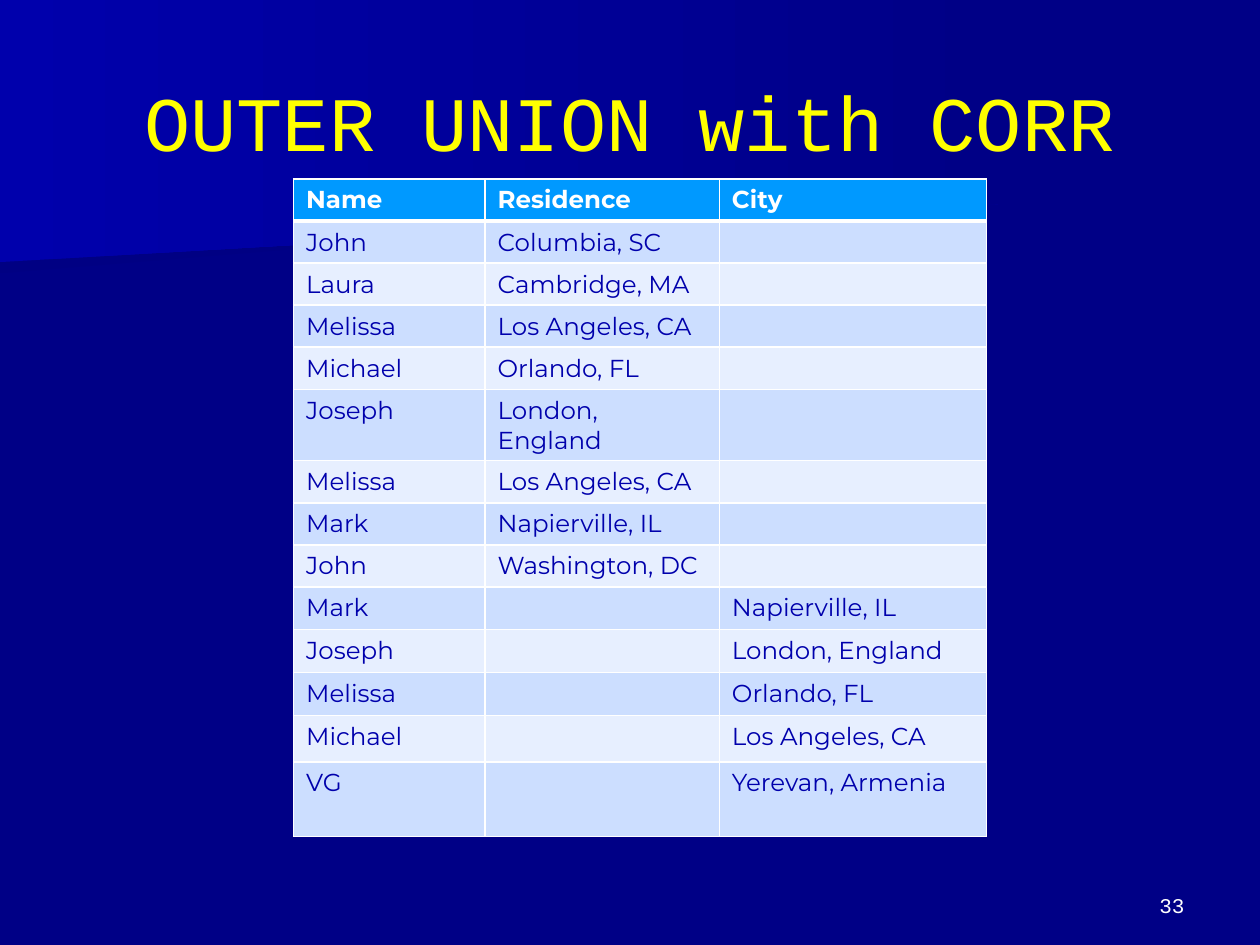
from dataclasses import dataclass

from lxml.etree import SubElement
from pptx import Presentation
from pptx.dml.color import RGBColor
from pptx.enum.text import MSO_ANCHOR as Anchor, PP_ALIGN as Align
from pptx.oxml.ns import qn
from pptx.util import Inches, Pt


@dataclass(frozen=True)
class Theme:
    background: str = "000086"
    shade: str = "000083"
    glow: str = "0000AC"
    title: str = "FFFF00"
    white: str = "FFFFFF"
    header: str = "0099FF"
    bands: tuple = ("CCDEFF", "E7EFFF")
    mono: str = "Courier New"
    sans: str = "Montserrat"
    title_size: int = 44
    table_size: int = 14
    number_size: int = 12


THEME = Theme()

COLUMN_WIDTHS = [1.52, 1.86, 2.12]
ROW_HEIGHTS = [0.33] * 5 + [0.55] + [0.33] * 3 + [0.34] * 3 + [0.37, 0.59]
ROWS = [
    ("Name", "Residence", "City"),
    ("John", "Columbia, SC", ""),
    ("Laura", "Cambridge, MA", ""),
    ("Melissa", "Los Angeles, CA", ""),
    ("Michael", "Orlando, FL", ""),
    ("Joseph", "London, England", ""),
    ("Melissa", "Los Angeles, CA", ""),
    ("Mark", "Napierville, IL", ""),
    ("John", "Washington, DC", ""),
    ("Mark", "", "Napierville, IL"),
    ("Joseph", "", "London, England"),
    ("Melissa", "", "Orlando, FL"),
    ("Michael", "", "Los Angeles, CA"),
    ("VG", "", "Yerevan, Armenia"),
]


def color(value):
    return RGBColor.from_string(value)


def place(shape, left, top, width, height):
    shape.left, shape.top = Inches(left), Inches(top)
    shape.width, shape.height = Inches(width), Inches(height)


def add_run(paragraph, text, font_name, size, text_color, bold=False):
    run = paragraph.add_run()
    run.text = text
    run.font.name = font_name
    run.font.size = Pt(size)
    run.font.bold = bold
    run.font.color.rgb = color(text_color)


def add_beam(slide, points, start_color):
    """Draw a background panel that fades rightwards into the background."""
    corners = [(Inches(x), Inches(y)) for x, y in points]
    builder = slide.shapes.build_freeform(*corners[0])
    builder.add_line_segments(corners[1:], close=True)
    beam = builder.convert_to_shape()
    beam.shadow.inherit = False
    beam.line.fill.background()
    beam.fill.gradient()
    beam.fill.gradient_angle = 0
    for stop, value in zip(beam.fill.gradient_stops, (start_color, THEME.background)):
        stop.color.rgb = color(value)


def add_title(slide, text):
    title = slide.shapes.title
    place(title, 0.5, 0.33, 9, 1.25)
    slide.shapes._spTree.append(title._element)  # in front of the beams
    title.text_frame.vertical_anchor = Anchor.MIDDLE
    paragraph = title.text_frame.paragraphs[0]
    paragraph.alignment = Align.CENTER
    add_run(paragraph, text, THEME.mono, THEME.title_size, THEME.title)


def add_slide_number(slide, text):
    box = slide.shapes.add_textbox(Inches(7.17), Inches(6.83), Inches(2.33), Inches(0.5))
    box.text_frame.word_wrap = True
    box.text_frame.vertical_anchor = Anchor.BOTTOM
    paragraph = box.text_frame.paragraphs[0]
    paragraph.alignment = Align.RIGHT
    add_run(paragraph, text, THEME.mono, THEME.number_size, THEME.white)


def set_borders(cell, bottom_width):
    """Put the border lines ahead of the cell's fill, as the schema asks."""
    properties = cell._tc.get_or_add_tcPr()
    widths = {"a:lnL": 1, "a:lnR": 1, "a:lnT": 1, "a:lnB": bottom_width}
    for position, (tag, width) in enumerate(widths.items()):
        line = SubElement(properties, qn(tag), w=str(Pt(width)))
        fill = SubElement(line, qn("a:solidFill"))
        SubElement(fill, qn("a:srgbClr"), val=THEME.white)
        properties.insert(position, line)


def fill_cell(cell, text, fill_color, text_color, is_header):
    cell.fill.solid()
    cell.fill.fore_color.rgb = color(fill_color)
    set_borders(cell, 3 if is_header else 1)
    paragraph = cell.text_frame.paragraphs[0]
    if text:
        add_run(paragraph, text, THEME.sans, THEME.table_size, text_color, is_header)
    else:  # keeps an empty cell from stretching its row
        SubElement(paragraph._p, qn("a:endParaRPr"), sz=str(THEME.table_size * 100))


def add_result_table(slide):
    table = slide.shapes.add_table(
        len(ROWS), len(COLUMN_WIDTHS), Inches(2.33), Inches(1.42),
        Inches(sum(COLUMN_WIDTHS)), Inches(sum(ROW_HEIGHTS))).table
    for column, width in zip(table.columns, COLUMN_WIDTHS):
        column.width = Inches(width)
    for index, (row, height, texts) in enumerate(zip(table.rows, ROW_HEIGHTS, ROWS)):
        row.height = Inches(height)
        is_header = index == 0
        fill_color = THEME.header if is_header else THEME.bands[(index - 1) % 2]
        text_color = THEME.white if is_header else THEME.glow
        for cell, text in zip(row.cells, texts):
            fill_cell(cell, text, fill_color, text_color, is_header)


def main():
    presentation = Presentation()
    presentation.slide_width, presentation.slide_height = Inches(10), Inches(7.5)
    slide = presentation.slides.add_slide(presentation.slide_layouts[5])
    slide.background.fill.solid()
    slide.background.fill.fore_color.rgb = color(THEME.background)

    add_beam(slide, [(7.78, 1.53), (0, 2.17), (0, 1.01), (7.79, 1.01), (7.78, 1.28)],
             THEME.shade)
    add_beam(slide, [(7.92, 1.62), (0, 2.08), (0, 0), (7.92, 0)], THEME.glow)
    add_title(slide, "OUTER UNION with CORR")
    add_slide_number(slide, "33")
    add_result_table(slide)
    presentation.save("out.pptx")


if __name__ == "__main__":
    main()
